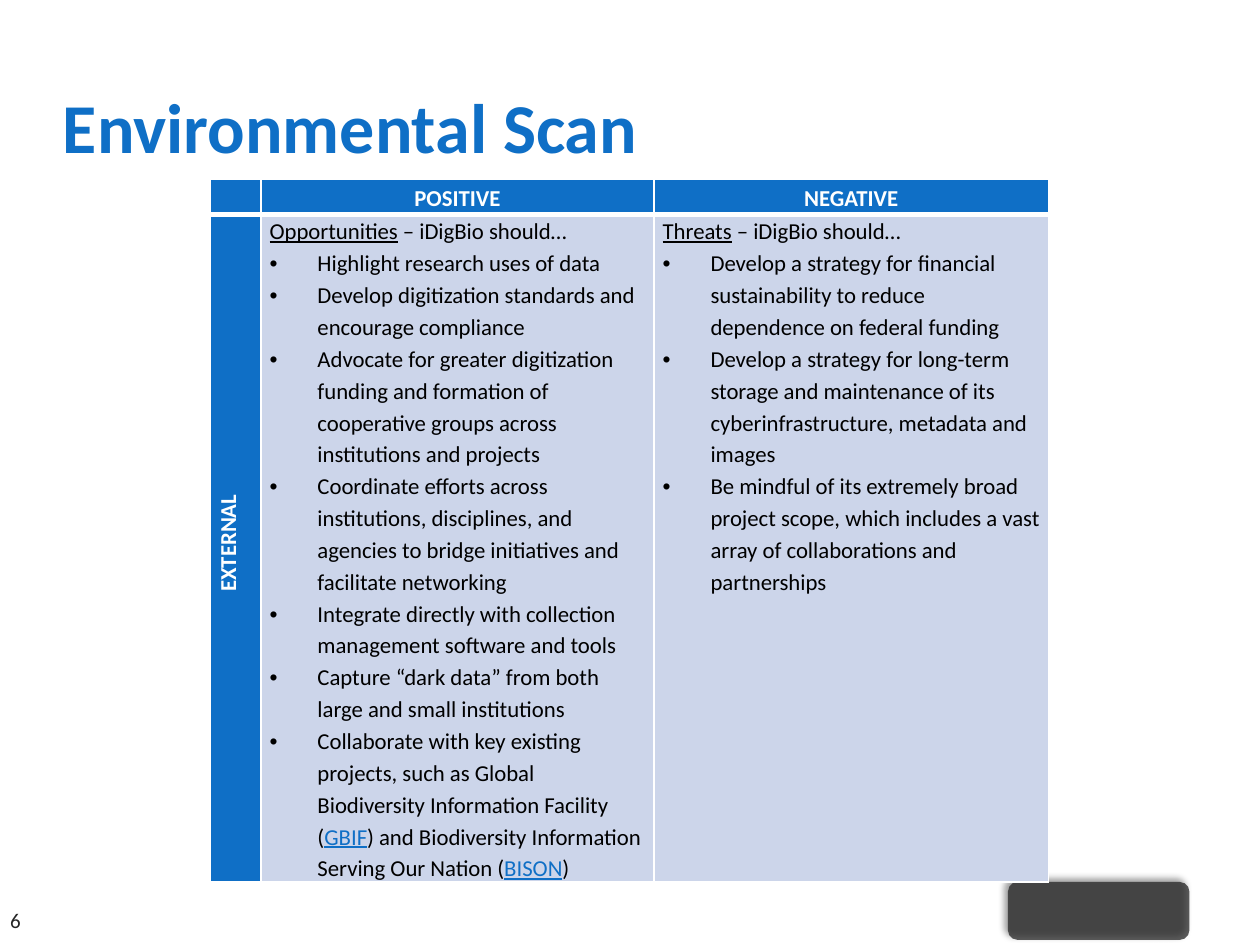
from lxml.etree import SubElement
from pptx import Presentation
from pptx.dml.color import RGBColor
from pptx.enum.shapes import MSO_SHAPE
from pptx.enum.text import MSO_ANCHOR, PP_ALIGN
from pptx.oxml import parse_xml
from pptx.oxml.ns import nsdecls, qn
from pptx.util import Inches, Pt

TITLE = "Environmental Scan"
PAGE_NUMBER = "6"
HEADERS = ["", "POSITIVE", "NEGATIVE"]
ROW_LABEL = "EXTERNAL"
LEAD_IN = " – iDigBio should…"
COLUMNS = [
    ("Opportunities", [
        ["Highlight research uses of data"],
        ["Develop digitization standards and encourage compliance"],
        ["Advocate for greater digitization funding and formation of "
         "cooperative groups across institutions and projects"],
        ["Coordinate efforts across institutions, disciplines, and agencies "
         "to bridge initiatives and facilitate networking"],
        ["Integrate directly with collection management software and tools"],
        ["Capture “dark data” from both large and small institutions"],
        ["Collaborate with key existing projects, such as Global Biodiversity "
         "Information Facility (", "GBIF",
         ") and Biodiversity Information Serving Our Nation (", "BISON", ")"],
    ]),
    ("Threats", [
        ["Develop a strategy for financial sustainability to reduce "
         "dependence on federal funding"],
        ["Develop a strategy for long-term storage and maintenance of its "
         "cyberinfrastructure, metadata and images"],
        ["Be mindful of its extremely broad project scope, which includes a "
         "vast array of collaborations and partnerships"],
    ]),
]
LINKS = {"GBIF", "BISON"}
COLUMN_WIDTHS = [0.4, 3.12, 3.13]
ROW_HEIGHTS = [0.28, 5.3]
THEME = {
    "font": "Calibri", "blue": "0F6FC6", "pale": "CCD5EA", "dark": "262626",
    "white": "FFFFFF", "black": "000000",
    "title": 40, "table": 13, "number": 12,
}


def color(name):
    return RGBColor.from_string(THEME[name])


def set_font(para, size, tone, bold=False):
    font = para.font
    font.name, font.size, font.bold = THEME["font"], Pt(THEME[size]), bold
    font.color.rgb = color(tone)


def add_label(page, place, text, size, tone, bold=False, top_inset=0):
    frame = page.shapes.add_textbox(*map(Inches, place)).text_frame
    frame.word_wrap = True
    frame.vertical_anchor = MSO_ANCHOR.BOTTOM
    frame.margin_left = frame.margin_right = frame.margin_bottom = 0
    frame.margin_top = Inches(top_inset)
    frame.text = text
    set_font(frame.paragraphs[0], size, tone, bold)


def add_badge(page):
    badge = page.shapes.add_shape(
        MSO_SHAPE.ROUNDED_RECTANGLE, *map(Inches, (8, 7, 1.44, 0.46)))
    badge.line.fill.background()
    badge.fill.solid()
    badge.fill.fore_color.rgb = color("dark")
    tint = badge.fill._xPr.find(qn("a:solidFill"))[0]
    SubElement(tint, qn("a:alpha"), val="75000")
    badge.shadow.inherit = False
    effects = badge._element.spPr.find(qn("a:effectLst"))
    effects.append(parse_xml(
        f'<a:outerShdw {nsdecls("a")} blurRad="{Pt(4)}" dist="{Pt(3)}" '
        f'dir="{225 * 60000}"><a:srgbClr val="{THEME["black"]}">'
        '<a:alpha val="50000"/></a:srgbClr></a:outerShdw>'))


def style_cell(cell, tone, top, bottom):
    cell.margin_left = cell.margin_right = Inches(0.07)
    cell.margin_top = cell.margin_bottom = 0
    properties = cell._tc.get_or_add_tcPr()
    for side, width in (("L", 1), ("R", 1), ("T", top), ("B", bottom)):
        properties.append(parse_xml(
            f'<a:ln{side} {nsdecls("a")} w="{Pt(width)}"><a:solidFill>'
            f'<a:srgbClr val="{THEME["white"]}"/></a:solidFill></a:ln{side}>'))
    cell.fill.solid()
    cell.fill.fore_color.rgb = color(tone)


def write_heading(cell, text):
    para = cell.text_frame.paragraphs[0]
    if text:
        para.text = text
    else:
        para._p.get_or_add_endParaRPr().set("sz", str(THEME["table"] * 100))
    para.alignment = PP_ALIGN.CENTER
    para.line_spacing = 1.15
    set_font(para, "table", "white", True)
    return para


def write_list(cell, heading, items):
    frame = cell.text_frame
    for index, spans in enumerate([[heading, LEAD_IN], *items]):
        para = frame.add_paragraph() if index else frame.paragraphs[0]
        if index:
            properties = para._p.get_or_add_pPr()
            properties.set("marL", str(Inches(0.38)))
            properties.set("indent", str(-Inches(0.38)))
            SubElement(properties, qn("a:buFont"), typeface="Arial")
            SubElement(properties, qn("a:buChar"), char="•")
        para.line_spacing = 1.15
        set_font(para, "table", "black")
        for text in spans:
            span = para.add_run()
            span.text = text
            if text in LINKS or text == heading:
                span.font.underline = True
            if text in LINKS:
                span.font.color.rgb = color("blue")


def add_scan_table(page):
    table = page.shapes.add_table(
        2, 3, Inches(1.67), Inches(1.42),
        Inches(sum(COLUMN_WIDTHS)), Inches(sum(ROW_HEIGHTS))).table
    table.first_row = table.horz_banding = False
    for column, width in zip(table.columns, COLUMN_WIDTHS):
        column.width = Inches(width)
    for row, height in zip(table.rows, ROW_HEIGHTS):
        row.height = Inches(height)
    for index, text in enumerate(HEADERS):
        style_cell(table.cell(0, index), "blue", 1, 3)
        table.cell(0, index).vertical_anchor = MSO_ANCHOR.MIDDLE
        write_heading(table.cell(0, index), text)
        style_cell(table.cell(1, index), "pale" if index else "blue", 3, 1)
    side = table.cell(1, 0)
    side._tc.tcPr.set("vert", "vert270")
    para = write_heading(side, ROW_LABEL)
    para._p.get_or_add_pPr().set("marL", str(Inches(0.08)))
    for index, (heading, items) in enumerate(COLUMNS, 1):
        write_list(table.cell(1, index), heading, items)


def main():
    """Build the environmental scan slide."""
    deck = Presentation()
    deck.slide_width, deck.slide_height = Inches(10), Inches(7.5)
    page = deck.slides.add_slide(deck.slide_layouts[6])
    add_badge(page)
    add_label(page, (0.5, 0.58, 9, 0.75), TITLE, "title", "blue", True, 0.05)
    add_label(page, (0.08, 7, 0.5, 0.4), PAGE_NUMBER, "number", "dark")
    add_scan_table(page)
    deck.save("out.pptx")


if __name__ == "__main__":
    main()
